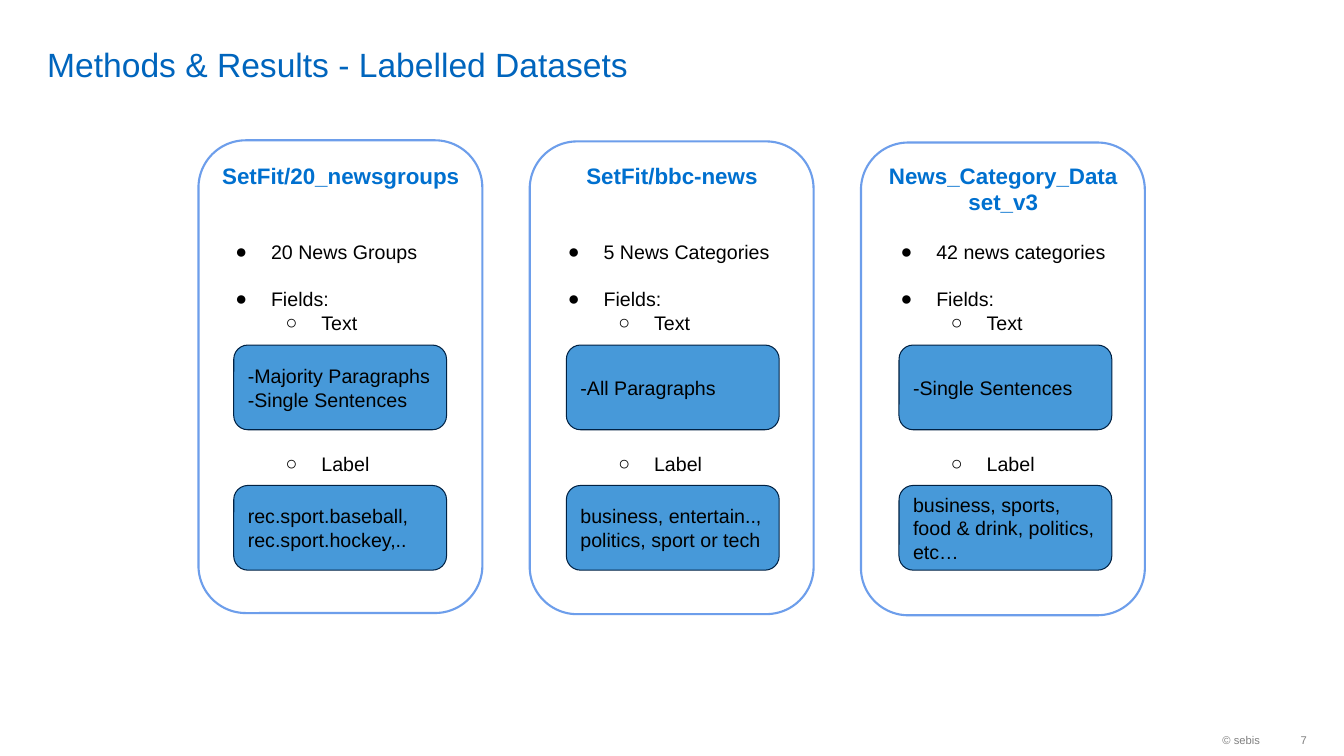
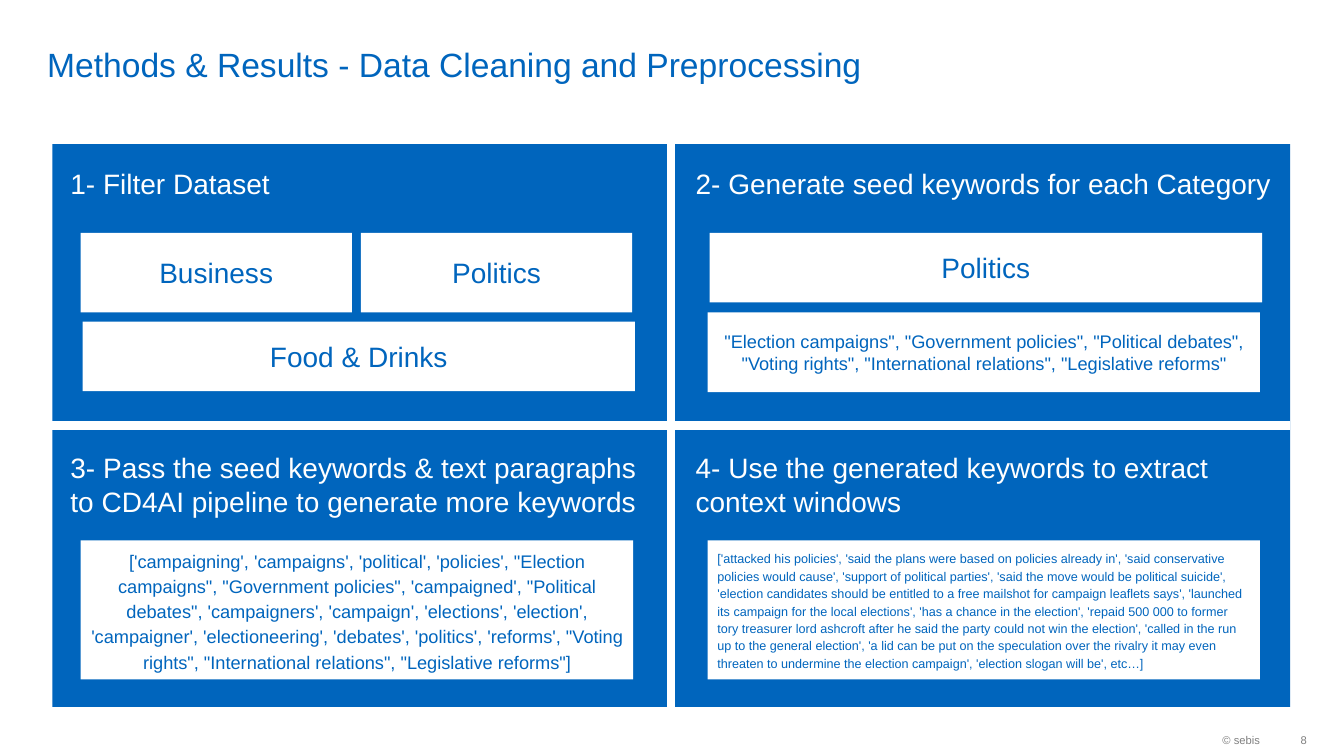
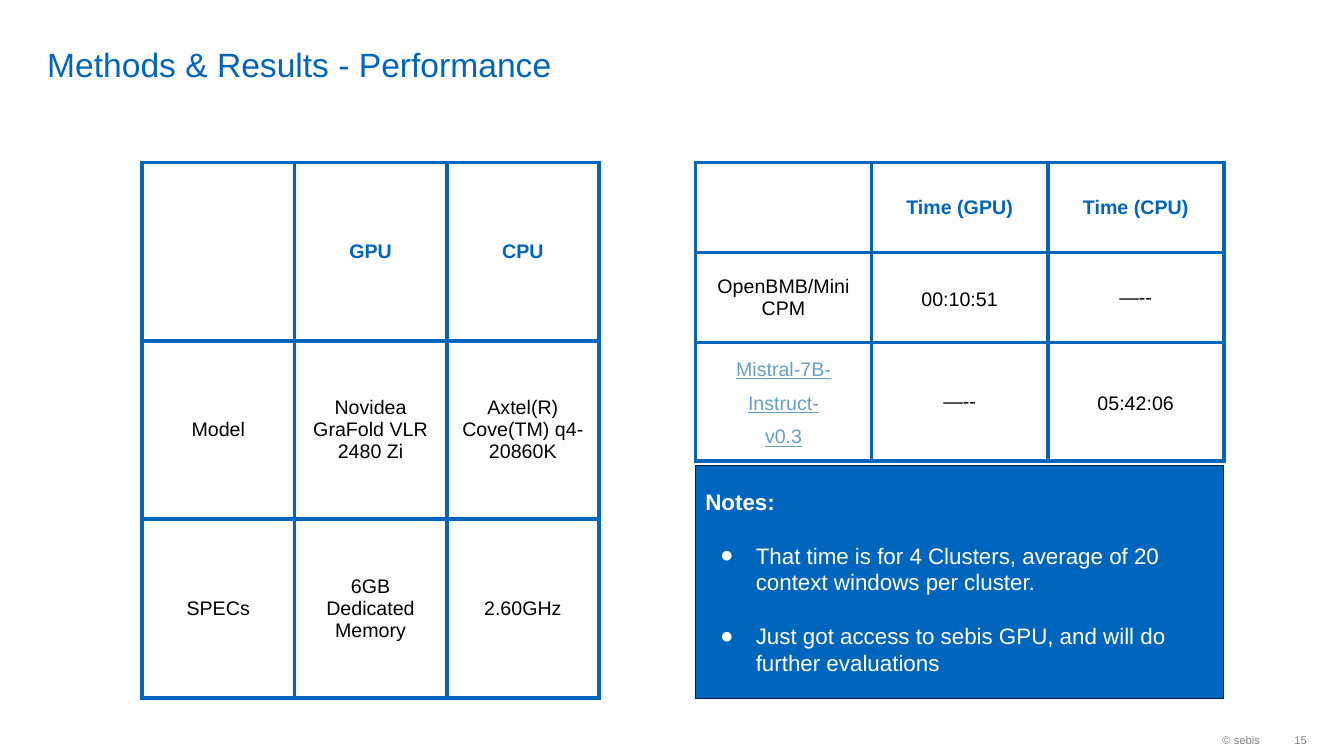
from lxml.etree import SubElement
from pptx import Presentation
from pptx.dml.color import RGBColor
from pptx.enum.shapes import MSO_CONNECTOR, MSO_SHAPE
from pptx.enum.text import MSO_ANCHOR, PP_ALIGN
from pptx.oxml.ns import qn
from pptx.util import Pt

FONT = "Arial"
BLUE = RGBColor(0x00, 0x65, 0xBD)
HEADING_BLUE = RGBColor(0x00, 0x70, 0xCF)
BOX_BLUE = RGBColor(0x47, 0x99, 0xD9)
CARD_LINE = RGBColor(0x6D, 0x9E, 0xEB)
NAVY = RGBColor(0x00, 0x21, 0x43)
LINK_BLUE = RGBColor(0x64, 0xA0, 0xC8)
GREY = RGBColor(0x7F, 0x7F, 0x7F)
BLACK = RGBColor(0, 0, 0)
WHITE = RGBColor(0xFF, 0xFF, 0xFF)
LEFT, CENTER, RIGHT = PP_ALIGN.LEFT, PP_ALIGN.CENTER, PP_ALIGN.RIGHT
TOP, MIDDLE, BOTTOM = MSO_ANCHOR.TOP, MSO_ANCHOR.MIDDLE, MSO_ANCHOR.BOTTOM

DATASETS = [
    ("SetFit/20_newsgroups", "20 News Groups",
     "-Majority Paragraphs\n-Single Sentences", "rec.sport.baseball,\nrec.sport.hockey,.."),
    ("SetFit/bbc-news", "5 News Categories",
     "-All Paragraphs", "business, entertain.., politics, sport or tech"),
    ("News_Category_Dataset_v3", "42 news categories",
     "-Single Sentences", "business, sports, food & drink, politics, etc…"),
]

STEPS = [
    "1- Filter Dataset",
    "2- Generate seed keywords for each Category",
    "3- Pass the seed keywords & text paragraphs to CD4AI pipeline to generate more keywords",
    "4- Use the generated keywords to extract context windows",
]
SEEDS = ('"Election campaigns", "Government policies", "Political debates", '
         '"Voting rights", "International relations", "Legislative reforms"')
KEYWORDS = (
    "['campaigning', 'campaigns', 'political', 'policies', \"Election campaigns\", "
    "\"Government policies\", 'campaigned', \"Political debates\", 'campaigners', 'campaign', "
    "'elections', 'election', 'campaigner', 'electioneering', 'debates', 'politics', 'reforms', "
    "\"Voting rights\", \"International relations\", \"Legislative reforms\"]")
CONTEXTS = (
    "['attacked his policies', 'said the plans were based on policies already in', "
    "'said conservative policies would cause', 'support of political parties', "
    "'said the move would be political suicide', 'election candidates should be entitled to "
    "a free mailshot for campaign leaflets says', 'launched its campaign for the local "
    "elections', 'has a chance in the election', 'repaid 500 000 to former tory treasurer lord "
    "ashcroft after he said the party could not win the election', 'called in the run up to the "
    "general election', 'a lid can be put on the speculation over the rivalry it may even "
    "threaten to undermine the election campaign', 'election slogan will be', etc…]")
# text, (left, top, width, height), size, alignment, line spacing
STEP_BOXES = [
    ("Business", (57.6, 166.3, 193.7, 56.9), 20, CENTER, None),
    ("Politics", (257.8, 166.3, 193.7, 56.9), 20, CENTER, None),
    ("Food & Drinks", (59, 229.7, 394.6, 49.7), 20, CENTER, None),
    ("Politics", (506.9, 166.3, 394.6, 49.7), 20, CENTER, None),
    (SEEDS, (505.4, 223.2, 394.6, 56.9), 13, CENTER, None),
    (KEYWORDS, (57.6, 385.9, 394.6, 99.4), 13, CENTER, 1.15),
    (CONTEXTS, (505.4, 385.9, 394.6, 99.4), 9, LEFT, 1.15),
]

HARDWARE = [
    ["", "GPU", "CPU"],
    ["Model", "Novidea GraFold VLR 2480 Zi", "Axtel(R) Cove(TM) q4-20860K"],
    ["SPECs", "6GB Dedicated Memory", "2.60GHz"],
]
LINKED_MODEL = "Mistral-7B-\nInstruct-\nv0.3"
TIMES = [
    ["", "Time (GPU)", "Time (CPU)"],
    ["OpenBMB/Mini\nCPM", "00:10:51", "—--"],
    [LINKED_MODEL, "—--", "05:42:06"],
]
NOTES = [
    "That time is for 4 Clusters, average of 20 context windows per cluster.",
    "Just got access to sebis GPU, and will do further evaluations",
]


def write(tf, text, size, color, align=LEFT, anchor=TOP, inset=(7.2, 7.2), bold=False,
          spacing=None):
    """Fill a text frame, one paragraph per line; inset is (horizontal, vertical)."""
    tf.text = text
    tf.word_wrap = True
    tf.vertical_anchor = anchor
    tf.margin_left = tf.margin_right = Pt(inset[0])
    tf.margin_top = tf.margin_bottom = Pt(inset[1])
    for p in tf.paragraphs:
        p.alignment = align
        if spacing:
            p.line_spacing = spacing
        for r in p.runs:
            f = r.font
            f.name, f.size, f.bold = FONT, Pt(size), bold
            f.color.rgb = color


def add_text(slide, box, text, size, color, **style):
    sp = slide.shapes.add_textbox(*map(Pt, box))
    write(sp.text_frame, text, size, color, **style)
    return sp.text_frame


def add_box(slide, kind, box, fill=None, line=None, width=0.75):
    sp = slide.shapes.add_shape(kind, *map(Pt, box))
    sp.shadow.inherit = False
    if fill is None:
        sp.fill.background()
    else:
        sp.fill.solid()
        sp.fill.fore_color.rgb = fill
    if line is None:
        sp.line.fill.background()
    else:
        sp.line.color.rgb = line
        sp.line.width = Pt(width)
    return sp


def add_divider(slide, x1, y1, x2, y2):
    line = slide.shapes.add_connector(MSO_CONNECTOR.STRAIGHT, *map(Pt, (x1, y1, x2, y2)))
    line.line.color.rgb = WHITE
    line.line.width = Pt(6)
    SubElement(line._element.spPr, qn("a:effectLst"))


def bullet(p, char, margin, before=0):
    pPr = p._p.get_or_add_pPr()
    pPr.set("marL", str(Pt(margin)))
    pPr.set("indent", str(Pt(-25.5)))
    SubElement(pPr, qn("a:buFont"), typeface=FONT)
    SubElement(pPr, qn("a:buChar"), char=char)
    if before:
        p.space_before = Pt(before)


def add_grid(slide, left, top, col_width, heights, rows):
    """Add a table with blue borders and a bold blue header row."""
    n_cols = len(rows[0])
    table = slide.shapes.add_table(len(rows), n_cols, Pt(left), Pt(top),
                                   Pt(col_width * n_cols), Pt(sum(heights))).table
    table.first_row = table.horz_banding = False
    for col in table.columns:
        col.width = Pt(col_width)
    for i, (row, height) in enumerate(zip(rows, heights)):
        table.rows[i].height = Pt(height)
        for j, text in enumerate(row):
            cell = table.cell(i, j)
            write(cell.text_frame, text, 14, BLACK if i else BLUE, CENTER, bold=i == 0)
            cell.vertical_anchor = MIDDLE
            cell.margin_left = cell.margin_right = Pt(7.2)
            cell.margin_top = cell.margin_bottom = Pt(7.2)
            cell.fill.background()
            tcPr = cell._tc.get_or_add_tcPr()
            for k, side in enumerate(("lnL", "lnR", "lnT", "lnB")):
                ln = SubElement(tcPr, qn("a:" + side), w=str(Pt(3)))
                fill = SubElement(ln, qn("a:solidFill"))
                SubElement(fill, qn("a:srgbClr"), val=str(BLUE))
                tcPr.insert(k, ln)
    return table


def add_page(prs, title, number):
    slide = prs.slides.add_slide(prs.slide_layouts[6])
    add_text(slide, (26.6, 3.6, 833.8, 56.9), title, 24, BLUE, anchor=BOTTOM, inset=(7.2, 0))
    footer = dict(align=RIGHT, anchor=MIDDLE)
    add_text(slide, (738.7, 517.2, 168.5, 23), "© sebis", 8, GREY, inset=(7.2, 3.6), **footer)
    add_text(slide, (907.2, 517.2, 26.3, 23), str(number), 8, GREY, inset=(0, 3.6), **footer)
    return slide


def build_datasets(prs):
    slide = add_page(prs, "Methods & Results - Labelled Datasets", 7)
    for i, (name, groups, texts, labels) in enumerate(DATASETS):
        card_x = 141.8 + 236.6 * i
        body_x = 150.5 + 237.6 * i
        add_box(slide, MSO_SHAPE.ROUNDED_RECTANGLE, (card_x, 100.2 + 0.8 * i, 202.8, 337.7),
                line=CARD_LINE, width=1.5)
        add_text(slide, (card_x + 10.9, 112.6, 181.4, 41.8), name, 16, HEADING_BLUE,
                 align=CENTER, inset=(5, 2.9), bold=True)
        tf = add_text(slide, (body_x, 164.2, 183.6, 252.7),
                      f"{groups}\nFields:\nText\nLabel", 14, BLACK)
        marks = [("●", 36, 0), ("●", 36, 16.8), ("○", 72, 0), ("○", 72, 84)]
        for p, mark in zip(tf.paragraphs, marks):
            bullet(p, *mark)
        for y, text in ((246.5, texts), (346.8, labels)):
            sp = add_box(slide, MSO_SHAPE.ROUNDED_RECTANGLE, (body_x + 16.5, y, 152, 60.5),
                         BOX_BLUE, NAVY)
            write(sp.text_frame, text, 14, BLACK, anchor=MIDDLE)


def build_cleaning(prs):
    slide = add_page(prs, "Methods & Results - Data Cleaning and Preprocessing", 8)
    left, top, width, height = panel = (37.4, 103, 884.2, 402)
    mid_x, mid_y = left + width / 2, top + height / 2
    add_box(slide, MSO_SHAPE.RECTANGLE, panel, BLUE)
    add_divider(slide, mid_x, top, mid_x, top + height)
    add_divider(slide, left, mid_y, left + width, mid_y)
    for i, step in enumerate(STEPS):
        row, col = divmod(i, 2)
        add_text(slide, (43.2 + 446.6 * col, 111.6 + 203 * row, 426.2, 182.2),
                 step, 20, WHITE)
    for text, box, size, align, spacing in STEP_BOXES:
        sp = add_box(slide, MSO_SHAPE.RECTANGLE, box, WHITE)
        write(sp.text_frame, text, size, BLUE, align, MIDDLE, spacing=spacing)


def build_performance(prs):
    slide = add_page(prs, "Methods & Results - Performance", 15)
    add_grid(slide, 101.5, 116, 108.8, [127.5] * 3, HARDWARE)
    times = add_grid(slide, 496.8, 116, 125.8, [64.4, 64.4, 83.5], TIMES)
    for row, col in ((1, 1), (2, 2)):
        times.cell(row, col).text_frame.paragraphs[0].line_spacing = 1.15
    link = times.cell(2, 0).text_frame.paragraphs
    for i, p in enumerate(link):
        p.line_spacing = 1.15
        if i:
            p.space_before = Pt(6)
        p.runs[0].font.underline = True
        p.runs[0].font.color.rgb = LINK_BLUE
    link[-1].space_after = Pt(6)

    sp = add_box(slide, MSO_SHAPE.RECTANGLE, (496.8, 332.6, 377.3, 166.3), BLUE, NAVY)
    write(sp.text_frame, "\n".join(["Notes:", *NOTES]), 16, WHITE, anchor=MIDDLE)
    heading, *notes = sp.text_frame.paragraphs
    heading.runs[0].font.bold = True
    for p in notes:
        bullet(p, "●", 36, 19.2)


def main():
    prs = Presentation()
    prs.slide_width, prs.slide_height = Pt(960), Pt(540)
    build_datasets(prs)
    build_cleaning(prs)
    build_performance(prs)
    prs.save("out.pptx")


if __name__ == "__main__":
    main()
